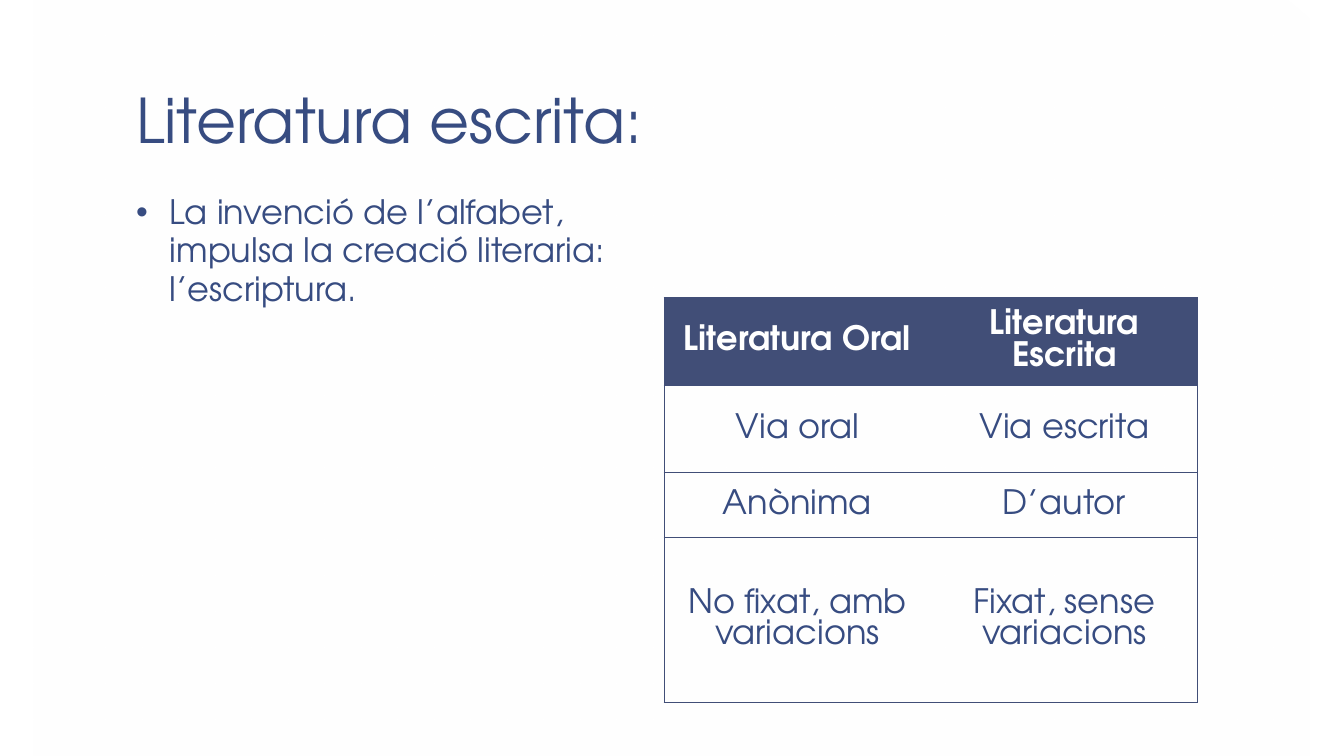
import lxml.etree
import pptx
import pptx.dml.color
import pptx.enum.shapes
import pptx.enum.text
import pptx.oxml.ns
import pptx.util

SLIDE_WIDTH = pptx.util.Inches(13.33)
SLIDE_HEIGHT = pptx.util.Inches(7.5)
FONT_NAME = "TeX Gyre Adventor"
INK = pptx.dml.color.RGBColor(0x37, 0x4C, 0x81)
NAVY = pptx.dml.color.RGBColor(0x41, 0x4E, 0x77)
WHITE = pptx.dml.color.RGBColor(0xFF, 0xFF, 0xFF)
ALIGN = pptx.enum.text.PP_ALIGN
ANCHOR = pptx.enum.text.MSO_ANCHOR

PANEL_AREA = (2.48, 0, 94.97, 100)
TITLE_AREA = (9.15, 1.2, 83.35, 20.4)
BODY_AREA = (9.15, 24.73, 40.81, 65.2)
TABLE_AREA = (49.4, 39.33, 39.72, 53.6)
ROW_SHARES = (11.6, 11.6, 8.6, 21.8)
COMPARISON = (
    ("Literatura Oral", "Literatura Escrita"),
    ("Via oral", "Via escrita"),
    ("Anònima", "D’autor"),
    ("No fixat, amb variacions", "Fixat, sense variacions"),
)


def across(share):
    return round(SLIDE_WIDTH * share / 100)


def down(share):
    return round(SLIDE_HEIGHT * share / 100)


def place(area):
    left, top, width, height = area
    return across(left), down(top), across(width), down(height)


def set_values(target, values):
    for name, value in values.items():
        setattr(target, name, value)


def add_child(parent, tag, **attributes):
    return lxml.etree.SubElement(parent, pptx.oxml.ns.qn(tag), attributes)


def format_paragraph(paragraph, size, color, bold=False, **layout):
    set_values(paragraph, layout)
    set_values(paragraph.font, {
        "name": FONT_NAME,
        "size": pptx.util.Pt(size),
        "bold": bold,
    })
    paragraph.font.color.rgb = color


def format_frame(frame, anchor):
    set_values(frame, {
        "word_wrap": True,
        "auto_size": pptx.enum.text.MSO_AUTO_SIZE.NONE,
        "vertical_anchor": anchor,
        "margin_left": pptx.util.Inches(0.13),
        "margin_right": pptx.util.Inches(0.13),
        "margin_top": pptx.util.Inches(0.07),
        "margin_bottom": pptx.util.Inches(0.07),
    })


def add_panel(slide):
    panel = slide.shapes.add_shape(pptx.enum.shapes.MSO_SHAPE.RECTANGLE, *place(PANEL_AREA))
    panel.shadow.inherit = False
    panel.line.fill.background()
    panel.fill.gradient()
    panel.fill.gradient_angle = 230
    for stop in panel.fill.gradient_stops:
        stop.color.rgb = WHITE
    colors = list(panel._element.spPr.iter(pptx.oxml.ns.qn("a:srgbClr")))
    add_child(colors[0], "a:alpha", val="0")
    add_child(colors[-1], "a:alpha", val="55000")
    slide.shapes.title._element.addprevious(panel._element)


def fill_title(slide, text):
    title = slide.shapes.title
    set_values(title, dict(zip(("left", "top", "width", "height"), place(TITLE_AREA))))
    title.text = text
    format_frame(title.text_frame, ANCHOR.BOTTOM)
    format_paragraph(title.text_frame.paragraphs[0], 44, INK,
                     alignment=ALIGN.LEFT, line_spacing=0.85)


def add_bullet_text(slide, text):
    frame = slide.shapes.add_textbox(*place(BODY_AREA)).text_frame
    format_frame(frame, ANCHOR.TOP)
    paragraph = frame.paragraphs[0]
    paragraph.text = text
    properties = paragraph._p.get_or_add_pPr()
    indent = pptx.util.Inches(0.33)
    properties.set("marL", str(indent))
    properties.set("indent", str(-indent))
    add_child(properties, "a:buFont", typeface="Arial")
    add_child(properties, "a:buChar", char="•")
    format_paragraph(paragraph, 24, INK, alignment=ALIGN.LEFT, line_spacing=0.95)


def set_borders(cell, visible_sides):
    properties = cell._tc.get_or_add_tcPr()
    for side in "LRTB":
        line = add_child(properties, f"a:ln{side}", w=str(pptx.util.Pt(0.5)))
        if side in visible_sides:
            fill = add_child(line, "a:solidFill")
            add_child(fill, "a:srgbClr", val=str(NAVY))
        else:
            add_child(line, "a:noFill")


def fill_cell(cell, text, is_header, outer_side):
    set_borders(cell, "TB" + outer_side)
    cell.vertical_anchor = ANCHOR.MIDDLE
    if is_header:
        cell.fill.solid()
        cell.fill.fore_color.rgb = NAVY
    else:
        cell.fill.background()
    cell.text = text
    format_paragraph(cell.text_frame.paragraphs[0], 24, WHITE if is_header else INK,
                     bold=is_header, alignment=ALIGN.CENTER)


def add_comparison_table(slide):
    table = slide.shapes.add_table(len(COMPARISON), 2, *place(TABLE_AREA)).table
    set_values(table, {"first_row": False, "horz_banding": False})
    for row, share in zip(table.rows, ROW_SHARES):
        row.height = down(share)
    for row_index, texts in enumerate(COMPARISON):
        for column_index, text in enumerate(texts):
            fill_cell(table.cell(row_index, column_index), text,
                      row_index == 0, "LR"[column_index])


def main():
    presentation = pptx.Presentation()
    set_values(presentation, {"slide_width": SLIDE_WIDTH, "slide_height": SLIDE_HEIGHT})
    slide = presentation.slides.add_slide(presentation.slide_layouts.get_by_name("Title Only"))
    slide.background.fill.solid()
    slide.background.fill.fore_color.rgb = WHITE
    add_panel(slide)
    fill_title(slide, "Literatura escrita:")
    add_bullet_text(slide, "La invenció de l’alfabet, impulsa la creació literaria: l’escriptura.")
    add_comparison_table(slide)
    presentation.save("out.pptx")


if __name__ == "__main__":
    main()
